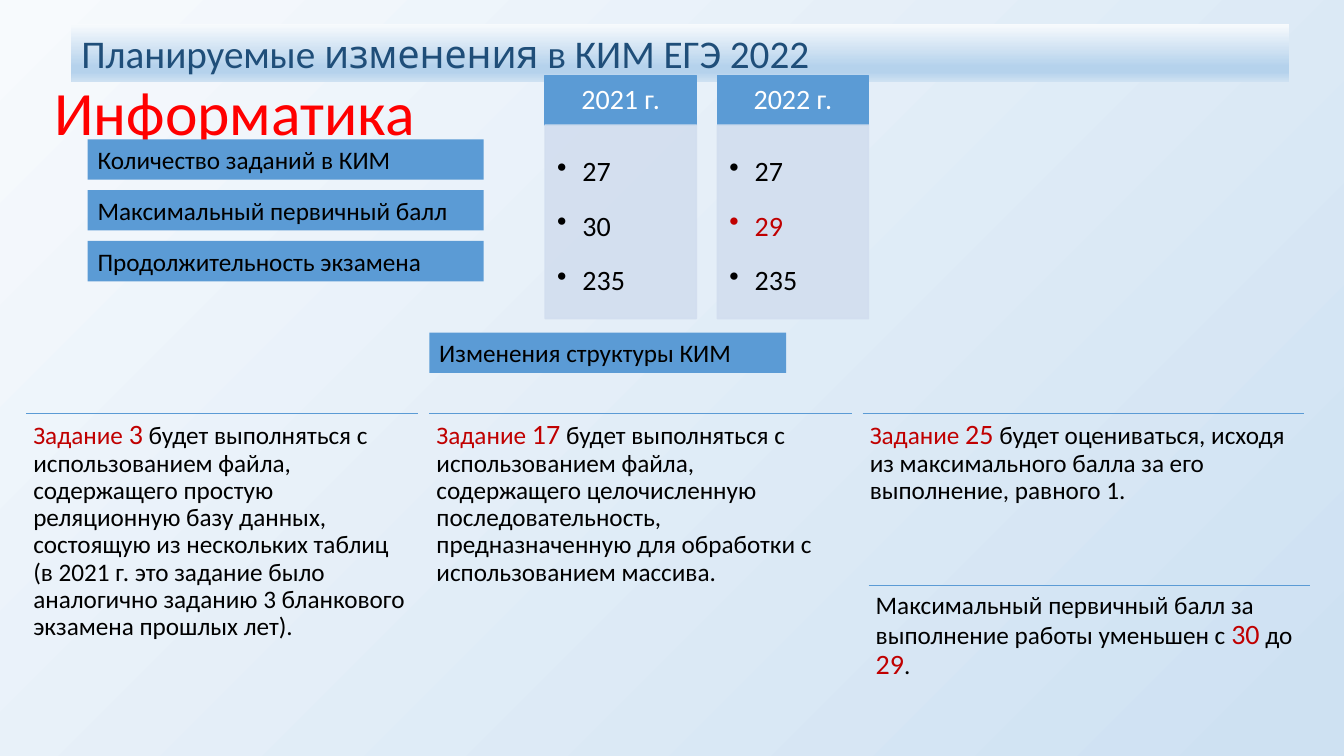
"""Build the slide on planned changes to the 2022 informatics exam."""
from lxml import etree
from pptx import Presentation
from pptx.dml.color import RGBColor
from pptx.enum.shapes import MSO_CONNECTOR, MSO_SHAPE
from pptx.enum.text import MSO_ANCHOR, PP_ALIGN
from pptx.oxml.ns import qn
from pptx.util import Cm, Pt

RECTANGLE = MSO_SHAPE.RECTANGLE
STRAIGHT = MSO_CONNECTOR.STRAIGHT
TOP, MIDDLE = MSO_ANCHOR.TOP, MSO_ANCHOR.MIDDLE
LEFT, CENTER = PP_ALIGN.LEFT, PP_ALIGN.CENTER

BLACK = RGBColor(0x00, 0x00, 0x00)
WHITE = RGBColor(0xFF, 0xFF, 0xFF)
RED = RGBColor(0xFF, 0x00, 0x00)
DARK_RED = RGBColor(0xC0, 0x00, 0x00)
NAVY = RGBColor(0x1F, 0x4E, 0x79)
BLUE = RGBColor(0x5B, 0x9B, 0xD5)
PALE_BLUE = RGBColor(0xD2, 0xDE, 0xEF)
SKY = RGBColor(0xB5, 0xD2, 0xEC)
ICE = RGBColor(0xF7, 0xFA, 0xFD)
MIST = RGBColor(0xCE, 0xE1, 0xF2)

LABELS = ["Количество заданий в КИМ", "Максимальный первичный балл", "Продолжительность экзамена"]
YEARS = [
    ("2021 г.", [("27", BLACK), ("30", BLACK), ("235", BLACK)]),
    ("2022 г.", [("27", BLACK), ("29", DARK_RED), ("235", BLACK)]),
]
TASKS = [
    (0.66, 9.88, 7.85, "3",
     " будет выполняться с использованием файла, содержащего простую реляционную базу данных, "
     "состоящую из нескольких таблиц (в 2021 г. это задание было аналогично заданию 3 "
     "бланкового экзамена прошлых лет)."),
    (10.82, 10.64, 7.85, "17",
     " будет выполняться с использованием файла, содержащего целочисленную последовательность, "
     "предназначенную для обработки с использованием массива."),
    (21.74, 11.13, 2.87, "25",
     " будет оцениваться, исходя из максимального балла за его выполнение, равного 1."),
]


class SlideBuilder:
    """Hold the style and the current slide."""

    font = "Calibri"
    text_insets = (0.25, 0.13, 0.25, 0.13)
    header_insets = (0.41, 0.23, 0.41, 0.23)
    body_insets = (0.3, 0.3, 0.41, 0.43)
    note_insets = (0.18, 0.18, 0.18, 0.18)

    def __init__(self, presentation):
        """Add a title-only slide."""
        self.slide = presentation.slides.add_slide(presentation.slide_layouts[5])

    def gradient(self, owner, fill, stops, angle):
        """Fill with a linear gradient of (percent, colour) stops."""
        fill.gradient()
        fill.gradient_angle = angle
        stop_list = next(owner.element.iter(qn("a:gsLst")))
        for stop in list(stop_list):
            stop_list.remove(stop)
        for percent, color in stops:
            stop = etree.SubElement(stop_list, qn("a:gs"), pos=str(percent * 1000))
            etree.SubElement(stop, qn("a:srgbClr"), val=str(color))

    def background(self, stops, angle):
        """Fill the slide background."""
        self.gradient(self.slide, self.slide.background.fill, stops, angle)

    def frame(self, shape, insets, anchor):
        """Prepare the text frame of a shape."""
        frame = shape.text_frame
        frame.word_wrap = True
        frame.vertical_anchor = anchor
        (frame.margin_left, frame.margin_top,
         frame.margin_right, frame.margin_bottom) = [Cm(inset) for inset in insets]
        return frame

    def add_runs(self, paragraph, runs, spacing=1.0, alignment=LEFT):
        """Add (text, size, colour[, font]) runs to a paragraph."""
        paragraph.alignment = alignment
        paragraph.line_spacing = spacing
        for text, size, color, *font in runs:
            run = paragraph.add_run()
            run.text = text
            run.font.name = font[0] if font else self.font
            run.font.size = Pt(size)
            run.font.color.rgb = color

    def bullet(self, paragraph):
        """Give a paragraph a hanging bullet."""
        properties = paragraph._p.get_or_add_pPr()
        properties.set("marL", str(Cm(0.64)))
        properties.set("indent", str(-Cm(0.64)))
        etree.SubElement(properties, qn("a:buChar"), char="•")

    def title(self, box, text):
        """Place and format the title."""
        title = self.slide.shapes.title
        title.left, title.top, title.width, title.height = [Cm(length) for length in box]
        frame = self.frame(title, self.text_insets, MIDDLE)
        self.add_runs(frame.paragraphs[0], [(text, 44, RED)], 0.9)

    def rectangle(self, box, color=None, outlined=False):
        """Add a rectangle, filled when a colour is given."""
        shape = self.slide.shapes.add_shape(RECTANGLE, *[Cm(length) for length in box])
        shape.shadow.inherit = False
        if color is not None:
            shape.fill.solid()
            shape.fill.fore_color.rgb = color
        if outlined:
            shape.line.color.rgb = color
            shape.line.width = Pt(1)
        else:
            shape.line.fill.background()
        return shape

    def band(self, box, stops, runs):
        """Add the gradient heading band."""
        shape = self.rectangle(box)
        self.gradient(shape, shape.fill, stops, 270)
        self.add_runs(self.frame(shape, self.text_insets, TOP).paragraphs[0], runs)

    def label(self, box, text):
        """Add a blue label."""
        frame = self.frame(self.rectangle(box, BLUE), self.text_insets, TOP)
        self.add_runs(frame.paragraphs[0], [(text, 18, BLACK)])

    def year_column(self, left, year, values):
        """Add a year header above its bulleted values."""
        header = self.rectangle((left, 1.91, 3.81, 1.24), BLUE, True)
        frame = self.frame(header, self.header_insets, MIDDLE)
        self.add_runs(frame.paragraphs[0], [(year, 20, WHITE)], 0.9, CENTER)
        body = self.rectangle((left, 3.15, 3.81, 4.88), PALE_BLUE, True)
        for color in body.element.spPr.iter(qn("a:srgbClr")):
            etree.SubElement(color, qn("a:alpha"), val="90000")
        frame = self.frame(body, self.body_insets, TOP)
        for index, (value, color) in enumerate(values):
            paragraph = frame.add_paragraph() if index else frame.paragraphs[0]
            self.add_runs(paragraph, [(value, 20, color)], 1.5)
            paragraph.space_after = Pt(3)
            self.bullet(paragraph)

    def note(self, left, top, width, height, runs):
        """Add a text with a thin rule above it."""
        rule = self.slide.shapes.add_connector(
            STRAIGHT, Cm(left), Cm(top), Cm(left + width), Cm(top))
        rule.line.color.rgb = BLUE
        rule.line.width = Pt(0.5)
        etree.SubElement(rule.element.spPr, qn("a:effectLst"))
        box = self.slide.shapes.add_textbox(Cm(left), Cm(top), Cm(width), Cm(height))
        self.add_runs(self.frame(box, self.note_insets, TOP).paragraphs[0], runs, 0.9)


def main():
    """Build and save the presentation."""
    presentation = Presentation()
    presentation.slide_width = Cm(33.87)
    presentation.slide_height = Cm(19.05)
    builder = SlideBuilder(presentation)
    builder.background([(0, ICE), (97, MIST)], 315)
    builder.title((1.12, 1.91, 9.7, 2.01), "Информатика")
    builder.band((1.8, 0.61, 30.68, 1.45), [(0, ICE), (74, SKY), (83, SKY), (100, MIST)], [
        ("Планируемые ", 28, NAVY),
        ("изменения", 28, NAVY, "Cabin"),
        (" в КИМ ЕГЭ 2022", 28, NAVY),
    ])
    for index, text in enumerate(LABELS):
        builder.label((2.21, 3.51 + 1.28 * index, 9.98, 1.02), text)
    for index, (year, values) in enumerate(YEARS):
        builder.year_column(13.74 + 4.34 * index, year, values)
    builder.label((10.82, 8.38, 8.99, 1.02), "Изменения структуры КИМ")
    for left, width, height, number, text in TASKS:
        builder.note(left, 10.41, width, height, [
            ("Задание ", 18, DARK_RED), (number, 20, DARK_RED), (text, 18, BLACK)])
    builder.note(21.89, 14.76, 11.13, 2.84, [
        ("Максимальный первичный балл за выполнение работы уменьшен с ", 18, BLACK),
        ("30", 20, DARK_RED),
        (" до ", 18, BLACK),
        ("29", 20, DARK_RED),
        (".", 18, BLACK),
    ])
    presentation.save("out.pptx")


if __name__ == "__main__":
    main()
